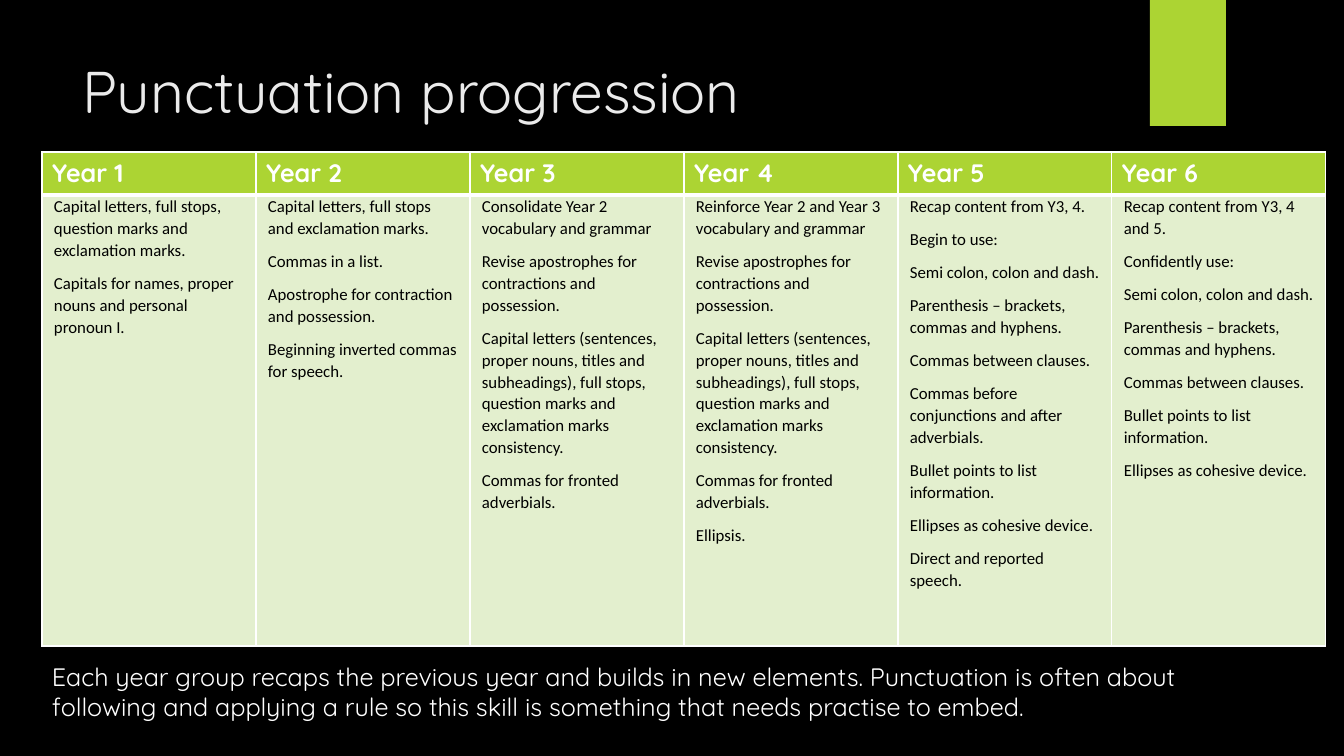
from lxml import etree
from pptx import Presentation
from pptx.dml.color import RGBColor
from pptx.enum.shapes import MSO_SHAPE
from pptx.enum.text import MSO_ANCHOR, PP_ALIGN
from pptx.oxml.ns import qn
from pptx.util import Pt

RECTANGLE = MSO_SHAPE.RECTANGLE
TOP = MSO_ANCHOR.TOP
LEFT = PP_ALIGN.LEFT

TITLE = "Punctuation progression"
SUMMARY = (
    "Each year group recaps the previous year and builds in new elements. "
    "Punctuation is often about following and applying a rule so this skill "
    "is something that needs practise to embed."
)
MIDDLE_YEARS = [
    "Revise apostrophes for contractions and possession.",
    "Capital letters (sentences, proper nouns, titles and subheadings), "
    "full stops, question marks and exclamation marks consistency.",
    "Commas for fronted adverbials.",
]
UPPER_YEARS = [
    "Semi colon, colon and dash.",
    "Parenthesis – brackets, commas and hyphens.",
    "Commas between clauses.",
]
LISTS_AND_ELLIPSES = [
    "Bullet points to list information.",
    "Ellipses as cohesive device.",
]
YEARS = {
    "Year 1": [
        "Capital letters, full stops, question marks and exclamation marks.",
        "Capitals for names, proper nouns and personal pronoun I.",
    ],
    "Year 2": [
        "Capital letters, full stops and exclamation marks.",
        "Commas in a list.",
        "Apostrophe for contraction and possession.",
        "Beginning inverted commas for speech.",
    ],
    "Year 3": ["Consolidate Year 2 vocabulary and grammar", *MIDDLE_YEARS],
    "Year 4": [
        "Reinforce Year 2 and Year 3 vocabulary and grammar",
        *MIDDLE_YEARS,
        "Ellipsis.",
    ],
    "Year 5": [
        "Recap content from Y3, 4.",
        "Begin to use:",
        *UPPER_YEARS,
        "Commas before conjunctions and after adverbials.",
        *LISTS_AND_ELLIPSES,
        "Direct and reported speech.",
    ],
    "Year 6": [
        "Recap content from Y3, 4 and 5.",
        "Confidently use:",
        *UPPER_YEARS,
        *LISTS_AND_ELLIPSES,
    ],
}

COLOURS = {
    "black": "000000",
    "white": "FFFFFF",
    "title": "EBEBEB",
    "lime": "ACD433",
    "pale": "E3EFCE",
}
TITLE_FONT = {"name": "Quicksand", "size": Pt(42), "bold": False}
HEADER_FONT = {"name": "Quicksand", "size": Pt(18), "bold": True}
BODY_FONT = {"name": "Calibri", "size": Pt(12), "bold": False}
SUMMARY_FONT = {"name": "Quicksand", "size": Pt(18), "bold": False}
BODY_SPACING = {"line_spacing": 1.07, "space_after": Pt(8)}
BODY_MARGINS = {
    "margin_left": 12, "margin_top": 0, "margin_right": 12, "margin_bottom": 0,
}

EMU_PER_PX = 914400 / 100.8
SLIDE_SIZE = (1344, 756)
TITLE_BOX = (72, 50, 1037, 154)
TAB_BOX = (1150, 0, 76, 126)
SUMMARY_BOX = (42, 656, 1219, 72)
TABLE_LEFT, TABLE_TOP, COLUMN_WIDTH = 42, 152, 214
HEADER_HEIGHT, BODY_HEIGHT = 43, 451


def px(length):
    return round(length * EMU_PER_PX)


def scaled(lengths):
    return [px(length) for length in lengths]


def rgb(name):
    return RGBColor.from_string(COLOURS[name])


def fill_solid(fill, colour):
    fill.solid()
    fill.fore_color.rgb = rgb(colour)


def assign(target, values):
    for name, value in values.items():
        setattr(target, name, value)


def write(frame, lines, font, colour, spacing=None):
    frame.text = "\n".join(lines)
    for para in frame.paragraphs:
        para.alignment = LEFT
        assign(para, spacing or {})
        for span in para.runs:
            assign(span.font, font)
            span.font.color.rgb = rgb(colour)


def add_borders(cell, widths):
    """Put white lines, widths in points by side, ahead of the cell's fill."""
    properties = cell._tc.get_or_add_tcPr()
    for index, (side, width) in enumerate(widths.items()):
        line = etree.Element(qn(f"a:ln{side}"), w=str(Pt(width)))
        solid = etree.SubElement(line, qn("a:solidFill"))
        etree.SubElement(solid, qn("a:srgbClr"), val=COLOURS["white"])
        properties.insert(index, line)


def add_year_table(slide):
    width = COLUMN_WIDTH * len(YEARS)
    height = HEADER_HEIGHT + BODY_HEIGHT
    box = scaled((TABLE_LEFT, TABLE_TOP, width, height))
    table = slide.shapes.add_table(2, len(YEARS), *box).table
    table.horz_banding = False
    table.rows[0].height = px(HEADER_HEIGHT)
    table.rows[1].height = px(BODY_HEIGHT)
    for index, (year, skills) in enumerate(YEARS.items()):
        table.columns[index].width = px(COLUMN_WIDTH)
        header, body = table.cell(0, index), table.cell(1, index)
        fill_solid(header.fill, "lime")
        fill_solid(body.fill, "pale")
        add_borders(header, {"L": 1, "R": 1, "T": 1, "B": 3})
        add_borders(body, {"L": 1, "R": 1, "T": 3, "B": 1})
        assign(body, {side: px(gap) for side, gap in BODY_MARGINS.items()})
        write(header.text_frame, [year], HEADER_FONT, "white")
        write(body.text_frame, skills, BODY_FONT, "black", BODY_SPACING)


def main():
    deck = Presentation()
    deck.slide_width, deck.slide_height = scaled(SLIDE_SIZE)
    slide = deck.slides.add_slide(deck.slide_layouts[5])
    fill_solid(slide.background.fill, "black")

    tab = slide.shapes.add_shape(RECTANGLE, *scaled(TAB_BOX))
    tab.shadow.inherit = False
    fill_solid(tab.fill, "lime")
    tab.line.fill.background()

    title = slide.shapes.title
    title.left, title.top, title.width, title.height = scaled(TITLE_BOX)
    title.text_frame.vertical_anchor = TOP
    write(title.text_frame, [TITLE], TITLE_FONT, "title")

    add_year_table(slide)

    summary = slide.shapes.add_textbox(*scaled(SUMMARY_BOX))
    summary.text_frame.word_wrap = True
    write(summary.text_frame, [SUMMARY], SUMMARY_FONT, "white")

    deck.save("out.pptx")


if __name__ == "__main__":
    main()
